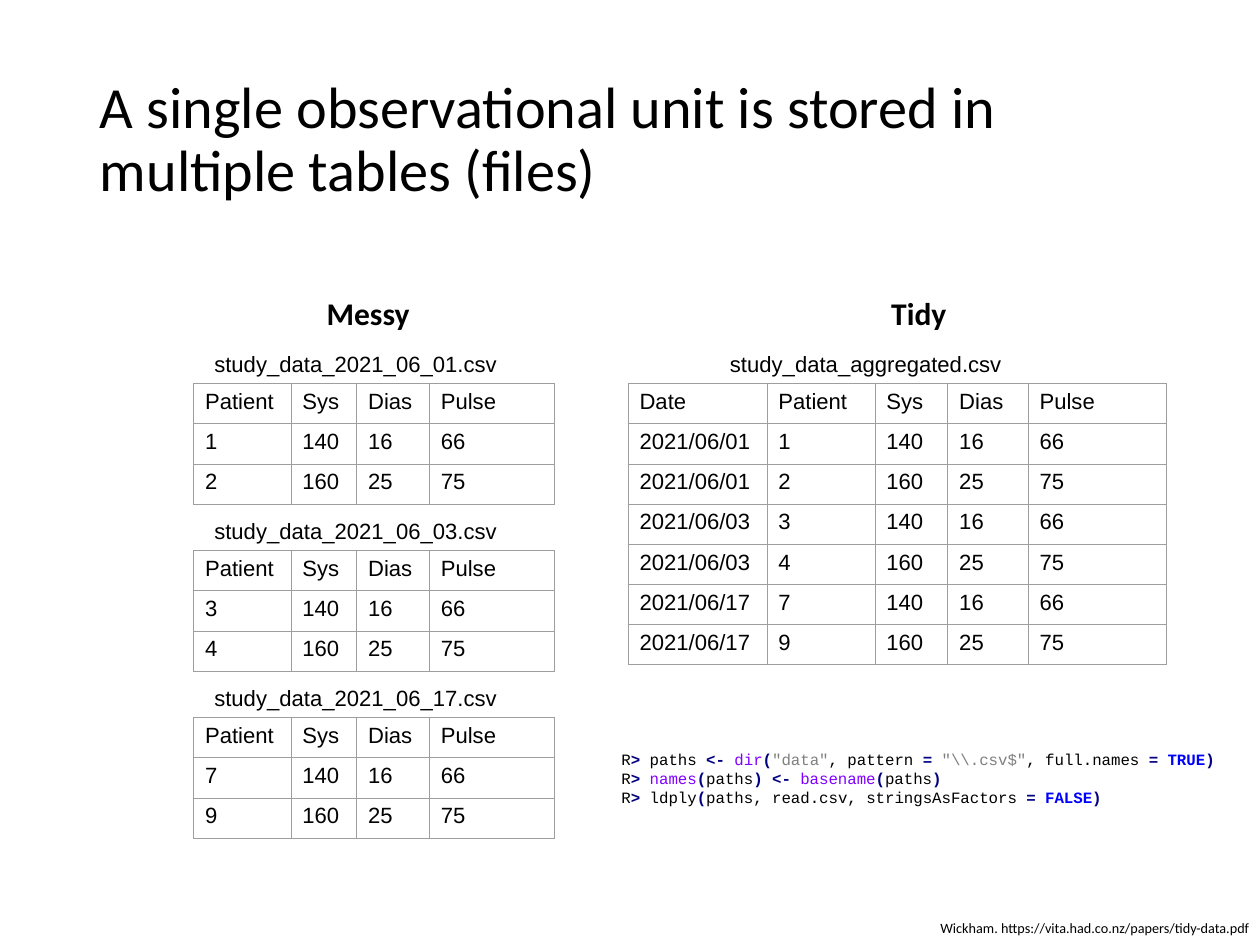
import pptx
import pptx.dml.color
import pptx.enum.text
import pptx.oxml
import pptx.oxml.ns
import pptx.util
from dataclasses import dataclass

Cm = pptx.util.Cm
Pt = pptx.util.Pt
Align = pptx.enum.text.PP_ALIGN
Anchor = pptx.enum.text.MSO_ANCHOR


@dataclass(frozen=True)
class Theme:
    heading_font: str = "Calibri"
    body_font: str = "Arial"
    code_font: str = "Courier New"
    title_size: int = 37
    heading_size: int = 20
    body_size: int = 14
    code_size: int = 10
    source_size: int = 9
    plain: str = "000000"
    operator: str = "000080"
    function: str = "8000FF"
    string: str = "808080"
    constant: str = "0000FF"
    border: str = "9E9E9E"


theme = Theme()


def write_text(frame, lines, font=theme.body_font, size=theme.body_size, bold=False,
               align=Align.LEFT, anchor=Anchor.TOP, wrap=True, inset=None,
               line_spacing=None, space_before=0, indent=None):
    """Fill a text frame; each line is a list of (text, theme colour name) runs."""
    frame.word_wrap = wrap
    frame.vertical_anchor = anchor
    if inset is not None:
        frame.margin_left = frame.margin_right = Cm(inset)
        frame.margin_top = frame.margin_bottom = Cm(inset)
    for number, runs in enumerate(lines):
        paragraph = frame.add_paragraph() if number else frame.paragraphs[0]
        paragraph.alignment = align
        paragraph.space_before = Pt(space_before)
        if line_spacing:
            paragraph.line_spacing = line_spacing
        if indent:
            properties = paragraph._p.get_or_add_pPr()
            properties.set("marL", str(Cm(indent[0])))
            properties.set("indent", str(Cm(indent[1])))
        for text, kind in runs:
            run = paragraph.add_run()
            run.text = text
            run.font.name = font
            run.font.size = Pt(size)
            run.font.bold = bold or kind in ("operator", "constant")
            run.font.color.rgb = pptx.dml.color.RGBColor.from_string(getattr(theme, kind))


def add_data_table(left, top, widths, rows):
    """Add a table with thin borders and no fill."""
    row_height = 0.9
    table = slide.shapes.add_table(len(rows), len(widths), Cm(left), Cm(top),
                                   Cm(sum(widths)), Cm(row_height * len(rows))).table
    table.first_row = table.horz_banding = False
    for column, width in zip(table.columns, widths):
        column.width = Cm(width)
    for row, values in zip(table.rows, rows):
        row.height = Cm(row_height)
        for cell, value in zip(row.cells, values):
            write_text(cell.text_frame, [[(value, "plain")]])
            cell.fill.background()
            properties = cell._tc.get_or_add_tcPr()
            for position, side in enumerate(("lnL", "lnR", "lnT", "lnB")):
                properties.insert(position, pptx.oxml.parse_xml(
                    f'<a:{side} {pptx.oxml.ns.nsdecls("a")} w="{Pt(0.75)}"><a:solidFill>'
                    f'<a:srgbClr val="{theme.border}"/></a:solidFill></a:{side}>'))


presentation = pptx.Presentation()
presentation.slide_width = Cm(28.22)
presentation.slide_height = Cm(21.16)
slide = presentation.slides.add_slide(presentation.slide_layouts[6])

title_format = dict(font=theme.heading_font, size=theme.title_size, anchor=Anchor.MIDDLE,
                    inset=0.28, line_spacing=0.9)
heading_format = dict(font=theme.heading_font, size=theme.heading_size, bold=True,
                      align=Align.CENTER, anchor=Anchor.BOTTOM, inset=0.28,
                      line_spacing=0.9, space_before=8, indent=(1.27, -0.64))
source_format = dict(font=theme.heading_font, size=theme.source_size, align=Align.RIGHT,
                     anchor=Anchor.BOTTOM, inset=0.25)
file_name_format = dict(wrap=False)
code_format = dict(font=theme.code_font, size=theme.code_size)

code = [
    [("R", "plain"), (">", "operator"), (" paths ", "plain"), ("<- ", "operator"),
     ("dir", "function"), ("(", "operator"), ('"data"', "string"), (", pattern ", "plain"),
     ("= ", "operator"), (r'"\\.csv$"', "string"), (", full.names ", "plain"),
     ("= ", "operator"), ("TRUE", "constant"), (")", "operator")],
    [("R", "plain"), ("> ", "operator"), ("names", "function"), ("(", "operator"),
     ("paths", "plain"), (") <- ", "operator"), ("basename", "function"),
     ("(", "operator"), ("paths", "plain"), (")", "operator")],
    [("R", "plain"), ("> ", "operator"), ("ldply", "plain"), ("(", "operator"),
     ("paths, read.csv, stringsAsFactors ", "plain"), ("= ", "operator"),
     ("FALSE", "constant"), (")", "operator")],
]

# Studies: each day has two patients with the same two sets of readings
table_top, study_pitch, file_name_rise = 8.59, 3.74, 0.86
header = ["Patient", "Sys", "Dias", "Pulse"]
readings = [["140", "16", "66"], ["160", "25", "75"]]
studies = {"2021/06/01": "12", "2021/06/03": "34", "2021/06/17": "79"}

file_names = []
tidy_rows = [["Date"] + header]
for number, (date, patients) in enumerate(studies.items()):
    top = table_top + number * study_pitch
    rows = [[patient] + reading for patient, reading in zip(patients, readings)]
    add_data_table(4.34, top, [2.18, 1.47, 1.63, 2.79], [header] + rows)
    tidy_rows += [[date] + row for row in rows]
    file_names.append((f"study_data_{date.replace('/', '_')}.csv",
                       (4.55, top - file_name_rise, 6.86, 0.86), file_name_format))
add_data_table(14.07, table_top, [3.11, 2.42, 1.63, 1.8, 3.1], tidy_rows)

# Text boxes: left, top, width, height
texts = [
    ("A single observational unit is stored in multiple tables (files)",
     (1.96, 1.12, 24.33, 4.09), title_format),
    ("Messy", (1.96, 5.18, 11.94, 2.54), heading_format),
    ("Tidy", (14.27, 5.18, 11.99, 2.54), heading_format),
    *file_names,
    ("study_data_aggregated.csv", (16.1, table_top - file_name_rise, 6.63, 0.86),
     file_name_format),
    (code, (13.67, 16.66, 14.12, 1.55), code_format),
    ("Wickham. https://vita.had.co.nz/papers/tidy-data.pdf",
     (0, 20.27, 28.22, 0.89), source_format),
]
for content, box, text_format in texts:
    text_box = slide.shapes.add_textbox(*map(Cm, box))
    lines = [[(content, "plain")]] if isinstance(content, str) else content
    write_text(text_box.text_frame, lines, **text_format)

presentation.save("out.pptx")
